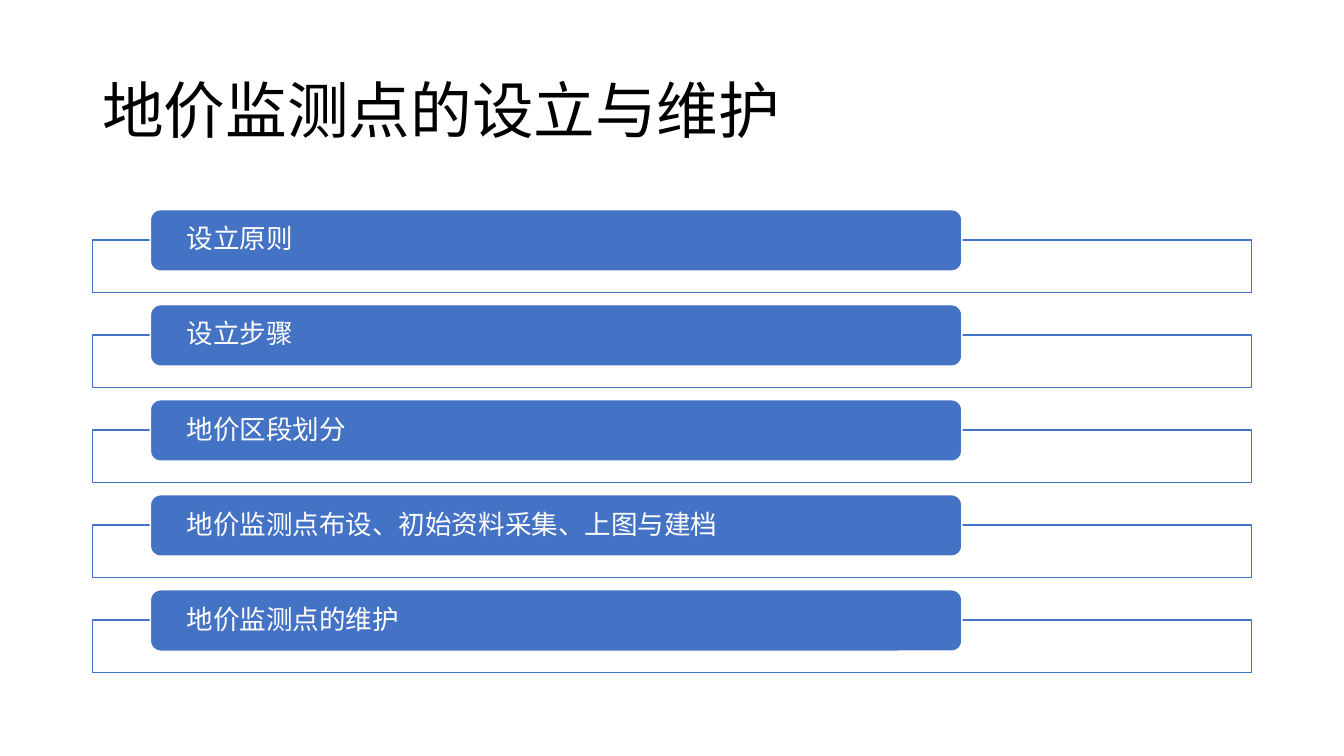
from dataclasses import dataclass

from lxml.etree import SubElement
from pptx import Presentation
from pptx.dml.color import RGBColor
from pptx.enum.shapes import MSO_SHAPE as Shape
from pptx.enum.text import MSO_ANCHOR as Anchor, PP_ALIGN as Align
from pptx.oxml.ns import qn
from pptx.util import Inches, Pt


@dataclass(frozen=True)
class Theme:
    font: str = "Noto Sans CJK SC"
    black: RGBColor = RGBColor(0x00, 0x00, 0x00)
    white: RGBColor = RGBColor(0xFF, 0xFF, 0xFF)
    blue: RGBColor = RGBColor(0x44, 0x72, 0xC4)
    title_size: float = 44
    topic_size: float = 19
    line_width: float = 1
    line_spacing: float = 0.9


@dataclass(frozen=True)
class Box:
    """Place and size in percent of the slide's width and height."""
    left: float
    top: float
    width: float
    height: float

    def lengths(self) -> tuple[int, int, int, int]:
        return (int(WIDTH * self.left / 100), int(HEIGHT * self.top / 100),
                int(WIDTH * self.width / 100), int(HEIGHT * self.height / 100))


@dataclass(frozen=True)
class Topic:
    text: str
    row: int

    @property
    def frame(self) -> Box:
        return Box(6.88, 31.73 + self.row * ROW_STEP, 86.25, 6.93)

    @property
    def label(self) -> Box:
        return Box(11.19, 27.73 + self.row * ROW_STEP, 60.38, 8.13)


THEME = Theme()
WIDTH, HEIGHT = Inches(13.33), Inches(7.5)
ROW_STEP = 12.57  # percent of the slide's height
TITLE = "地价监测点的设立与维护"
TITLE_BOX = Box(6.88, 5.33, 86.25, 19.33)
TOPICS = [Topic(text, row) for row, text in enumerate((
    "设立原则",
    "设立步骤",
    "地价区段划分",
    "地价监测点布设、初始资料采集、上图与建档",
    "地价监测点的维护",
))]


def write_text(shape, text: str, size: float, color: RGBColor) -> None:
    text_frame = shape.text_frame
    text_frame.text = text
    text_frame.word_wrap = True
    text_frame.vertical_anchor = Anchor.MIDDLE
    paragraph = text_frame.paragraphs[0]
    paragraph.alignment = Align.LEFT
    paragraph.line_spacing = THEME.line_spacing
    run = paragraph.runs[0]
    run.font.size = Pt(size)
    run.font.color.rgb = color
    run.font.name = THEME.font
    SubElement(run.font._element, qn("a:ea"), typeface=THEME.font)


def add_panel(slide, kind: Shape, box: Box, fill: RGBColor, line: RGBColor):
    shape = slide.shapes.add_shape(kind, *box.lengths())
    shape.shadow.inherit = False
    shape.fill.solid()
    shape.fill.fore_color.rgb = fill
    shape.line.color.rgb = line
    shape.line.width = Pt(THEME.line_width)
    return shape


def add_title(slide) -> None:
    title = slide.shapes.add_textbox(*TITLE_BOX.lengths())
    write_text(title, TITLE, THEME.title_size, THEME.black)


def add_topic(slide, topic: Topic) -> None:
    # Outlined frame, slightly transparent
    frame = add_panel(slide, Shape.RECTANGLE, topic.frame, THEME.white, THEME.blue)
    fill_color = frame._element.spPr.find(qn("a:solidFill"))[0]
    SubElement(fill_color, qn("a:alpha"), val="90000")

    # Rounded label over the frame's top edge
    label = add_panel(slide, Shape.ROUNDED_RECTANGLE, topic.label, THEME.blue, THEME.white)
    write_text(label, topic.text, THEME.topic_size, THEME.white)
    text_frame = label.text_frame
    text_frame.margin_left = text_frame.margin_right = Inches(0.33)
    text_frame.margin_top = text_frame.margin_bottom = Inches(0.03)


def main() -> None:
    presentation = Presentation()
    presentation.slide_width, presentation.slide_height = WIDTH, HEIGHT
    slide = presentation.slides.add_slide(presentation.slide_layouts[6])
    add_title(slide)
    for topic in TOPICS:
        add_topic(slide, topic)
    presentation.save("out.pptx")


if __name__ == "__main__":
    main()
